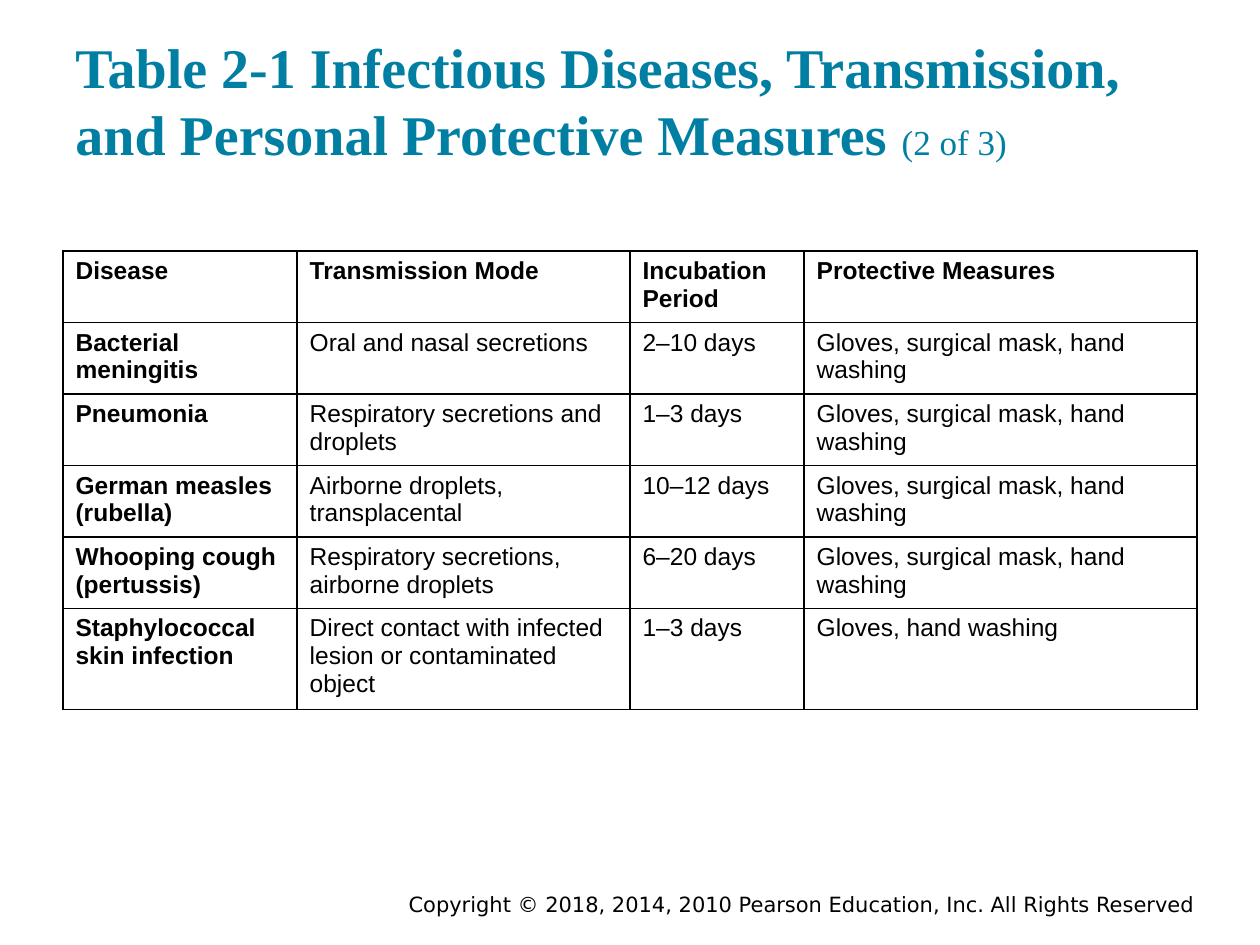
from lxml.etree import SubElement
from pptx import Presentation
from pptx.dml.color import RGBColor
from pptx.enum.text import MSO_ANCHOR, MSO_AUTO_SIZE, PP_ALIGN
from pptx.oxml.ns import qn
from pptx.util import Cm, Pt

TITLE = [
    ("Table 2-1 Infectious Diseases, Transmission, and Personal Protective Measures ", 32, True),
    ("(2 of 3)", 20, False),
]
FULL = "Gloves, surgical mask, hand washing"
ROWS = [
    ("Disease", "Transmission Mode", "Incubation Period", "Protective Measures"),
    ("Bacterial meningitis", "Oral and nasal secretions", "2–10 days", FULL),
    ("Pneumonia", "Respiratory secretions and\ndroplets", "1–3 days", FULL),
    ("German measles (rubella)", "Airborne droplets,\ntransplacental", "10–12 days", FULL),
    ("Whooping cough\n(pertussis)", "Respiratory secretions,\nairborne droplets", "6–20 days", FULL),
    ("Staphylococcal skin infection",
     "Direct contact with infected lesion or contaminated object",
     "1–3 days", "Gloves, hand washing"),
]
WIDTHS = [4.72, 6.71, 3.51, 7.92]
HEIGHTS = [1.37] * 5 + [1.93]
NOTICE = "Copyright © 2018, 2014, 2010 Pearson Education, Inc. All Rights Reserved"
LEFT = 1.27


def style(font, name, size, color, bold=False):
    font.name = name
    font.size = Pt(size)
    font.bold = bold
    font.color.rgb = RGBColor.from_string(color)


def border(cell, color="000000"):
    props = cell._tc.get_or_add_tcPr()
    for side in ("lnL", "lnR", "lnT", "lnB"):
        line = SubElement(props, qn(f"a:{side}"), w=str(Pt(1)))
        fill = SubElement(line, qn("a:solidFill"))
        SubElement(fill, qn("a:srgbClr"), val=color)


def add_title(slide):
    title = slide.shapes.title
    title.left, title.top, title.width, title.height = Cm(LEFT), Cm(0.64), Cm(22.86), Cm(2.97)
    frame = title.text_frame
    frame.word_wrap = True
    frame.auto_size = MSO_AUTO_SIZE.NONE
    frame.vertical_anchor = MSO_ANCHOR.BOTTOM
    frame.margin_left = frame.margin_right = Cm(0.25)
    frame.margin_top = frame.margin_bottom = Cm(0.25)
    para = frame.paragraphs[0]
    para.alignment = PP_ALIGN.LEFT
    for text, size, bold in TITLE:
        run = para.add_run()
        run.text = text
        style(run.font, "Times New Roman", size, "007FA3", bold)


def add_grid(slide):
    frame = slide.shapes.add_table(
        len(ROWS), len(WIDTHS), Cm(LEFT), Cm(5.06), Cm(sum(WIDTHS)), Cm(sum(HEIGHTS)))
    table = frame.table
    table.horz_banding = False
    for col, width in zip(table.columns, WIDTHS):
        col.width = Cm(width)
    for row, height in zip(table.rows, HEIGHTS):
        row.height = Cm(height)
    for r, texts in enumerate(ROWS):
        for c, text in enumerate(texts):
            cell = table.cell(r, c)
            cell.text = text
            border(cell)
            cell.fill.background()
            for para in cell.text_frame.paragraphs:
                style(para.font, "Arial", 14, "000000", r == 0 or c == 0)


def add_notice(slide):
    box = slide.shapes.add_textbox(Cm(7.42), Cm(17.91), Cm(16.92), Cm(0.64))
    frame = box.text_frame
    frame.word_wrap = True
    frame.vertical_anchor = MSO_ANCHOR.MIDDLE
    para = frame.paragraphs[0]
    para.text = NOTICE
    para.alignment = PP_ALIGN.RIGHT
    style(para.font, "DejaVu Sans", 12, "000000")


def main():
    deck = Presentation()
    deck.slide_width, deck.slide_height = Cm(25.4), Cm(19.05)
    slide = deck.slides.add_slide(deck.slide_layouts[5])
    add_notice(slide)
    add_title(slide)
    add_grid(slide)
    deck.save("out.pptx")


if __name__ == "__main__":
    main()
